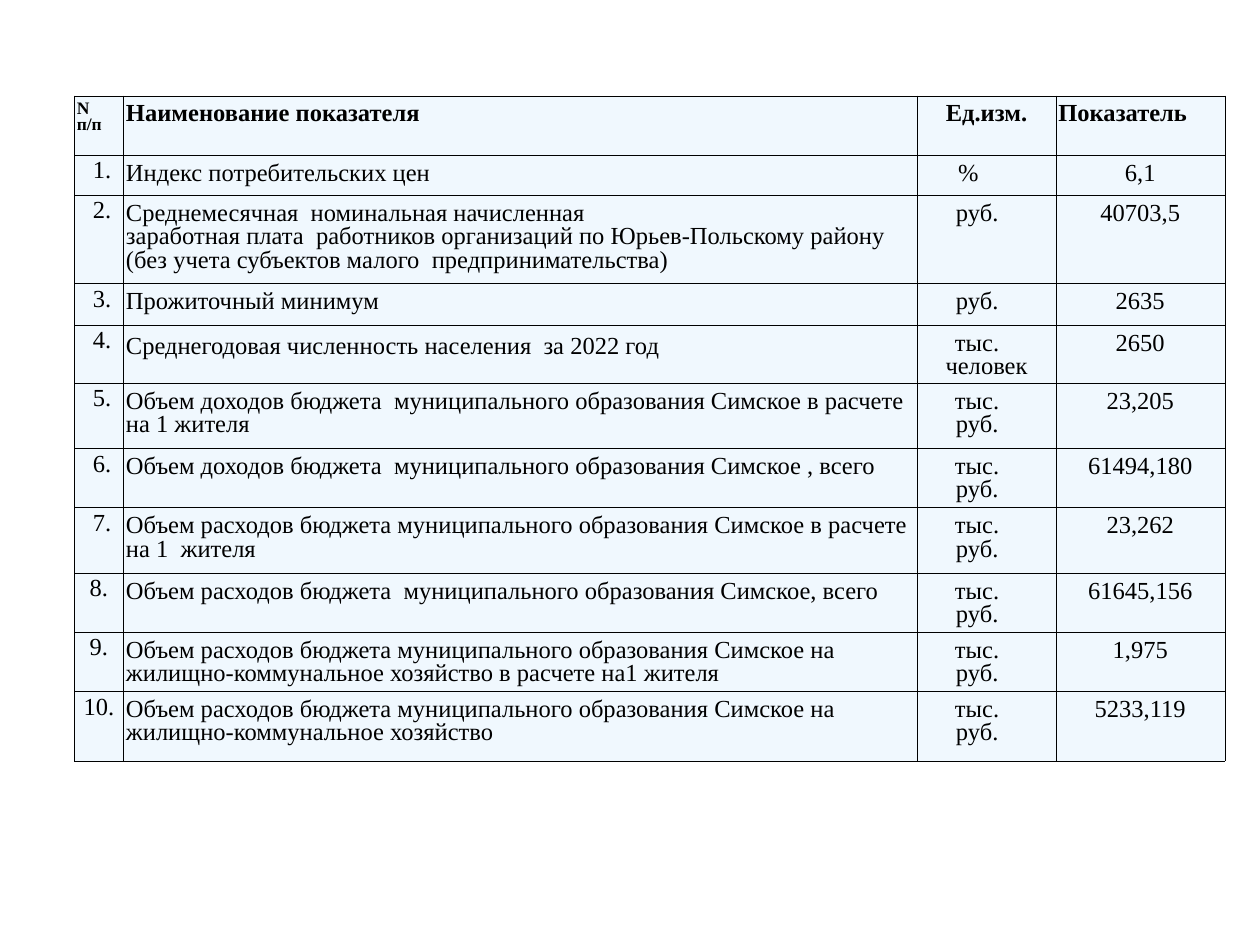
from lxml.etree import SubElement
from pptx import Presentation
from pptx.dml.color import RGBColor
from pptx.enum.text import PP_ALIGN as Align
from pptx.oxml.ns import qn
from pptx.util import Inches, Pt

COLORS = {"ink": "000000", "cell": "F0F8FE"}
FONT = "Times New Roman"
BORDER_WIDTH = Pt(0.11)
TABLE_LEFT, TABLE_TOP = 0.59, 0.76
COLUMN_WIDTHS = [0.39, 6.3, 1.1, 1.34]
ROW_HEIGHTS = [0.47, 0.32, 0.7, 0.33, 0.46, 0.52, 0.47, 0.52, 0.47, 0.47, 0.55]
SIDE_INSET = 0.02
TOP_INSETS = [0.04, 0.06, 0.06, 0.06]
HEADER_ALIGNS = [Align.LEFT, Align.LEFT, Align.CENTER, Align.LEFT]
BODY_ALIGNS = [Align.CENTER, Align.LEFT, Align.CENTER, Align.CENTER]
TIGHT = 0.86
NUMBER_SHIFT = 0.05
UNIT_SHIFTS = {"%": 0.29, "руб.": 0.15, "тыс.": 0.15}
UNSHIFTED_UNIT = "человек"

HEADERS = ["N\nп/п", "Наименование показателя", "Ед.изм.", "Показатель"]
INDICATORS = [
    ("Индекс потребительских цен", "%", "6,1"),
    ("Среднемесячная  номинальная начисленная\n"
     "заработная плата  работников организаций по Юрьев-Польскому району "
     "(без учета субъектов малого  предпринимательства)", "руб.", "40703,5"),
    ("Прожиточный минимум", "руб.", "2635"),
    ("Среднегодовая численность населения  за 2022 год", "тыс.\nчеловек", "2650"),
    ("Объем доходов бюджета  муниципального образования Симское в расчете на 1 жителя",
     "тыс.\nруб.", "23,205"),
    ("Объем доходов бюджета  муниципального образования Симское , всего",
     "тыс.\nруб.", "61494,180"),
    ("Объем расходов бюджета муниципального образования Симское в расчете на 1  жителя",
     "тыс.\nруб.", "23,262"),
    ("Объем расходов бюджета  муниципального образования Симское, всего",
     "тыс.\nруб.", "61645,156"),
    ("Объем расходов бюджета муниципального образования Симское на "
     "жилищно-коммунальное хозяйство в расчете на1 жителя", "тыс.\nруб.", "1,975"),
    ("Объем расходов бюджета муниципального образования Симское на "
     "жилищно-коммунальное хозяйство", "тыс.\nруб.", "5233,119"),
]
LAST_SHIFTED_NUMBER = 7
LOOSE_ROW = 4


def style_cell(cell, top, left_shift, right_shift):
    cell.margin_left = Inches(SIDE_INSET + left_shift)
    cell.margin_right = Inches(SIDE_INSET + right_shift)
    cell.margin_top, cell.margin_bottom = Inches(top), 0
    properties = cell._tc.get_or_add_tcPr()
    for side in ("lnL", "lnR", "lnT", "lnB"):
        border = SubElement(properties, qn(f"a:{side}"), w=str(int(BORDER_WIDTH)))
        ink = SubElement(border, qn("a:solidFill"))
        SubElement(ink, qn("a:srgbClr"), val=COLORS["ink"])
    cell.fill.solid()
    cell.fill.fore_color.rgb = RGBColor.from_string(COLORS["cell"])


def write_cell(cell, text, align, size, bold, spacing, line_indent):
    frame = cell.text_frame
    for index, line in enumerate(text.split("\n")):
        paragraph = frame.add_paragraph() if index else frame.paragraphs[0]
        paragraph.alignment = align
        paragraph.line_spacing = spacing
        if line == UNSHIFTED_UNIT:
            paragraph._p.get_or_add_pPr().set("marL", str(Inches(line_indent)))
        run = paragraph.add_run()
        run.text = line
        run.font.name, run.font.size, run.font.bold = FONT, Pt(size), bold
        run.font.color.rgb = RGBColor.from_string(COLORS["ink"])


def main():
    """Build the slide with the table of municipal indicators."""
    deck = Presentation()
    deck.slide_width, deck.slide_height = Inches(10), Inches(7.5)
    slide = deck.slides.add_slide(deck.slide_layouts[6])
    rows = [HEADERS] + [[f"{n}.", *row] for n, row in enumerate(INDICATORS, 1)]
    table = slide.shapes.add_table(
        len(rows), len(HEADERS), Inches(TABLE_LEFT), Inches(TABLE_TOP),
        Inches(sum(COLUMN_WIDTHS)), Inches(sum(ROW_HEIGHTS))).table
    table.first_row = table.horz_banding = False
    for column, width in zip(table.columns, COLUMN_WIDTHS):
        column.width = Inches(width)
    for row, height in zip(table.rows, ROW_HEIGHTS):
        row.height = Inches(height)

    for r, texts in enumerate(rows):
        is_header = r == 0
        aligns = HEADER_ALIGNS if is_header else BODY_ALIGNS
        for c, text in enumerate(texts):
            cell = table.cell(r, c)
            shifted = c == 0 and 1 <= r <= LAST_SHIFTED_NUMBER
            unit_shift = UNIT_SHIFTS.get(text.split("\n")[0], 0)
            style_cell(cell, TOP_INSETS[c], NUMBER_SHIFT if shifted else 0, unit_shift)
            size = 10 if is_header and c == 0 else 14
            spacing = 1.0 if (r, c) == (LOOSE_ROW, 1) else TIGHT
            write_cell(cell, text, aligns[c], size, is_header, spacing, unit_shift)
    deck.save("out.pptx")


if __name__ == "__main__":
    main()
